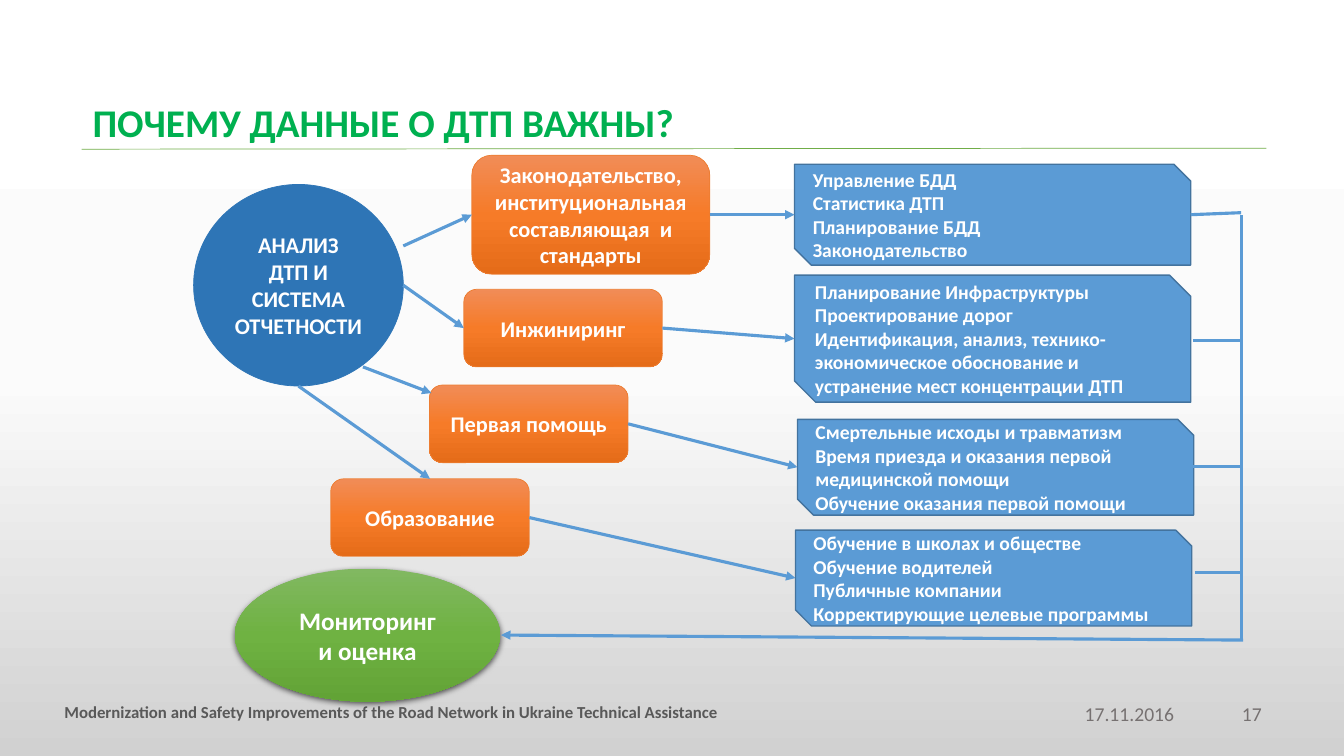
from dataclasses import dataclass

from copy import deepcopy
from lxml.etree import SubElement
from pptx import Presentation
from pptx.dml.color import RGBColor
from pptx.enum.shapes import MSO_CONNECTOR as Connector, MSO_SHAPE as Shape
from pptx.enum.text import MSO_ANCHOR as Anchor, PP_ALIGN as Align
from pptx.oxml.ns import qn
from pptx.util import Inches, Pt


@dataclass(frozen=True)
class Theme:
    """Colours, font and type sizes of the slide."""
    font: str = "Calibri"
    white: str = "FFFFFF"
    title: str = "00B050"
    footer: str = "595959"
    muted: str = "767171"
    rule: str = "70AD47"
    source: str = "2E75B6"
    topic_line: str = "ED7D31"
    detail: str = "5B9BD5"
    detail_line: str = "43739E"
    background: tuple = ("FFFFFF", "FBFBFB", "D1D1D1")
    topic: tuple = ("F18C57", "F67B28", "E56C19")
    monitoring: tuple = ("81B861", "6FB242", "62A336")
    title_size: int = 28
    monitoring_size: int = 18
    topic_size: int = 16
    detail_size: int = 14
    footer_size: int = 12


THEME = Theme()

BRANCHES = [
    ("Законодательство, институциональная составляющая  и стандарты",
     (4.68, 1.54, 2.36, 1.18), (4, 2.44), (4.68, 2.13), 1,
     (7.88, 1.63, 3.93, 1),
     ["Управление БДД", "Статистика ДТП", "Планирование БДД", "Законодательство"]),
    ("Инжиниринг", (4.6, 2.87, 1.97, 0.77), (4, 2.83), (4.6, 3.25), 1,
     (7.88, 2.73, 3.93, 1.26),
     ["Планирование Инфраструктуры", "Проектирование дорог",
      "Идентификация, анализ, технико-экономическое обоснование и "
      "устранение мест концентрации ДТП"]),
    ("Первая помощь", (4.26, 3.82, 1.97, 0.77), (3.6, 3.64), (4.28, 3.9), None,
     (7.91, 4.16, 3.93, 0.95),
     ["Смертельные исходы и травматизм Время приезда и оказания первой "
      "медицинской помощи", "Обучение оказания первой помощи"]),
    ("Образование", (3.28, 4.75, 1.97, 0.77), (2.96, 3.83), (4.26, 4.75), 0,
     (7.89, 5.26, 3.93, 0.95),
     ["Обучение в школах и обществе", "Обучение водителей",
      "Публичные компании", "Корректирующие целевые программы"]),
]

RETURN_LINES = [
    ((11.81, 2.13), (12.31, 2.11)),
    ((11.83, 3.38), (12.31, 3.38)),
    ((11.83, 4.63), (12.32, 4.63)),
    ((11.85, 5.68), (12.33, 5.68)),
    ((12.31, 6.35), (12.31, 2.13)),
]


def rgb(value):
    """Turn a hex string into a colour."""
    return RGBColor.from_string(value)


def fill_gradient(fill, element, colours):
    """Fill from top to bottom with three evenly spaced colours."""
    fill.gradient()
    fill.gradient_angle = 270
    stop_list = element.xpath(".//a:gsLst")[0]
    stop_list.append(deepcopy(stop_list[0]))
    for index, (stop, colour) in enumerate(zip(fill.gradient_stops, colours)):
        stop.color.rgb = rgb(colour)
        stop.position = index / 2


def write_text(shape, lines, size, colour, bold=True, align=Align.LEFT, anchor=Anchor.MIDDLE):
    """Write one paragraph per line in a shape."""
    frame = shape.text_frame
    frame.word_wrap = True
    frame.vertical_anchor = anchor
    frame.text = "\n".join(lines)
    for paragraph in frame.paragraphs:
        paragraph.alignment = align
        font = paragraph.font
        font.name, font.size, font.bold = THEME.font, Pt(size), bold
        font.color.rgb = rgb(colour)


def add_label(slide, box, text, size, colour, bold=False, anchor=Anchor.TOP):
    """Add a one-paragraph text box."""
    label = slide.shapes.add_textbox(*map(Inches, box))
    write_text(label, [text], size, colour, bold, anchor=anchor)
    return label


def add_node(slide, kind, box, lines, size, fill, line=None, line_width=0.5, align=Align.CENTER):
    """Add a filled shape with white bold text."""
    node = slide.shapes.add_shape(kind, *map(Inches, box))
    node.shadow.inherit = False
    if isinstance(fill, tuple):
        fill_gradient(node.fill, node._element, fill)
    else:
        node.fill.solid()
        node.fill.fore_color.rgb = rgb(fill)
    if line:
        node.line.color.rgb = rgb(line)
        node.line.width = Pt(line_width)
    else:
        node.line.fill.background()
    write_text(node, lines, size, THEME.white, align=align)
    return node


def add_line(slide, start, end, colour=THEME.detail, width=2.25, arrow=False):
    """Add a straight line, with an arrowhead at its end if asked."""
    line = slide.shapes.add_connector(Connector.STRAIGHT, *map(Inches, (*start, *end)))
    line.line.color.rgb = rgb(colour)
    line.line.width = Pt(width)
    if arrow:
        SubElement(line.line._get_or_add_ln(), qn("a:tailEnd"), type="triangle")
    SubElement(line._element.spPr, qn("a:effectLst"))
    return line


def add_soft_shadow(shape):
    """Put a soft shadow below a shape."""
    effects = shape._element.spPr.find(qn("a:effectLst"))
    shadow = SubElement(effects, qn("a:outerShdw"), blurRad=str(Pt(4.5)),
                        dist=str(Pt(1.5)), dir="5400000", algn="ctr", rotWithShape="0")
    colour = SubElement(shadow, qn("a:srgbClr"), val="000000")
    SubElement(colour, qn("a:alpha"), val="63000")


def add_branch(slide, topic, topic_box, start, end, side, detail_box, details):
    """Add a topic, its details and the two arrows that lead to them."""
    topic_node = add_node(slide, Shape.ROUNDED_RECTANGLE, topic_box, [topic],
                          THEME.topic_size, THEME.topic, THEME.topic_line)
    add_node(slide, Shape.SNIP_2_DIAG_RECTANGLE, detail_box, details, THEME.detail_size,
             THEME.detail, THEME.detail_line, 1, Align.LEFT)
    incoming = add_line(slide, start, end, arrow=True)
    if side is not None:
        incoming.end_connect(topic_node, side)
    left, top, width, height = topic_box
    detail_left, detail_top, _, detail_height = detail_box
    outgoing = add_line(slide, (left + width, top + height / 2),
                        (detail_left, detail_top + detail_height / 2), arrow=True)
    outgoing.begin_connect(topic_node, 3)


def main():
    """Build the slide and save it."""
    presentation = Presentation()
    presentation.slide_width, presentation.slide_height = Inches(13.33), Inches(7.5)
    slide = presentation.slides.add_slide(presentation.slide_layouts[6])
    fill_gradient(slide.background.fill, slide._element, THEME.background)

    add_line(slide, (0.81, 1.48), (12.56, 1.47), THEME.rule, 0.5)
    title = add_label(slide, (0.82, 0.95, 11.5, 0.57), "ПОЧЕМУ ДАННЫЕ О ДТП ВАЖНЫ?",
                      THEME.title_size, THEME.title, True, Anchor.MIDDLE)
    title.text_frame.paragraphs[0].line_spacing = 0.9
    add_label(slide, (0.54, 6.91, 9.93, 0.4),
              "Modernization and Safety Improvements of the Road Network in Ukraine "
              "Technical Assistance", THEME.footer_size, THEME.footer, True)
    add_label(slide, (10.66, 6.91, 1.63, 0.4), "17.11.2016", THEME.detail_size, THEME.muted)
    add_label(slide, (12.22, 6.91, 0.67, 0.4), "17", THEME.detail_size, THEME.muted)

    monitoring = add_node(slide, Shape.OVAL, (2.33, 5.64, 2.63, 1.32),
                          ["Мониторинг", "и оценка"], THEME.monitoring_size, THEME.monitoring)
    add_soft_shadow(monitoring)
    add_node(slide, Shape.OVAL, (1.92, 1.83, 2.08, 2), ["АНАЛИЗ", "ДТП И СИСТЕМА ОТЧЕТНОСТИ"],
             THEME.topic_size, THEME.source, THEME.source)
    for branch in BRANCHES:
        add_branch(slide, *branch)
    for start, end in RETURN_LINES:
        add_line(slide, start, end)
    add_line(slide, (12.33, 6.35), (4.97, 6.3), arrow=True)
    presentation.save("out.pptx")


if __name__ == "__main__":
    main()
